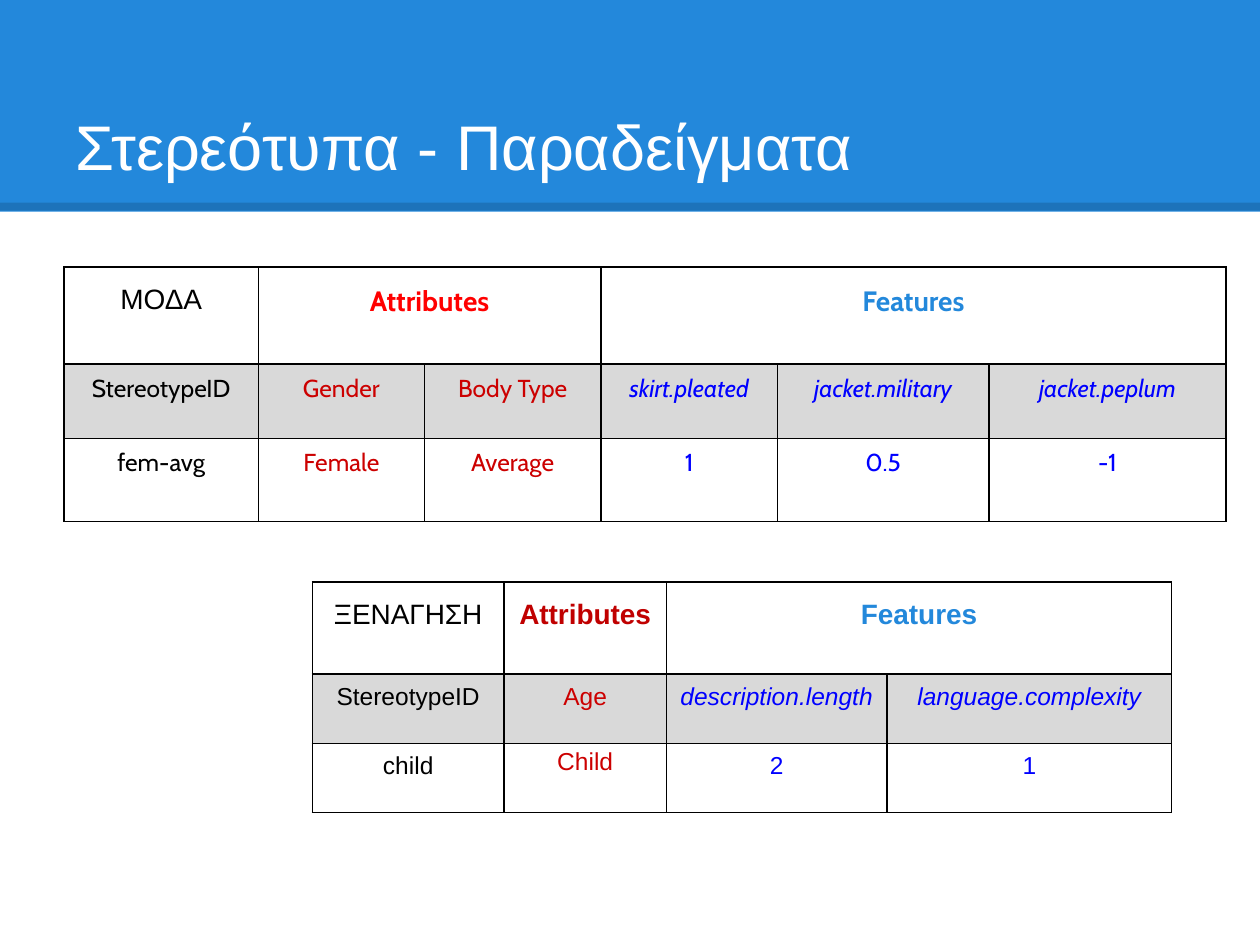
"""Build a slide with two tables of stereotype examples."""
from dataclasses import dataclass

from lxml import etree
from pptx import Presentation
from pptx.dml.color import RGBColor
from pptx.enum.shapes import MSO_CONNECTOR, MSO_SHAPE
from pptx.enum.text import MSO_ANCHOR, PP_ALIGN
from pptx.oxml.ns import qn
from pptx.util import Inches, Pt

RECTANGLE = MSO_SHAPE.RECTANGLE
STRAIGHT = MSO_CONNECTOR.STRAIGHT
BOTTOM = MSO_ANCHOR.BOTTOM
CENTER = PP_ALIGN.CENTER
GRID_COLUMNS, GRID_ROWS = 100, 75


@dataclass(frozen=True)
class Theme:
    plain_font: str = "Arial"
    accent_font: str = "Cabin"
    title_size: int = 36
    heading_size: int = 16
    body_size: int = 14
    white: str = "FFFFFF"
    black: str = "000000"
    blue: str = "2388DB"
    gray: str = "D9D9D9"
    bright_red: str = "FF0000"
    dark_red: str = "C00000"
    attribute: str = "CC0000"
    feature: str = "0000FF"
    line_spacing: float = 1.15


class SlideBuilder:
    def __init__(self, presentation, theme):
        self.theme = theme
        self.slide = presentation.slides.add_slide(presentation.slide_layouts[6])
        self.column = presentation.slide_width / GRID_COLUMNS
        self.row = presentation.slide_height / GRID_ROWS

    def box(self, left, top, width, height):
        return (round(left * self.column), round(top * self.row),
                round(width * self.column), round(height * self.row))

    def style(self, paragraph, text, size, color, font, bold=False, italic=False):
        paragraph.text = text
        paragraph.font.size = Pt(size)
        paragraph.font.name = font
        paragraph.font.bold = bold
        paragraph.font.italic = italic
        paragraph.font.color.rgb = RGBColor.from_string(color)

    def band(self, left, top, width, height, color):
        shape = self.slide.shapes.add_shape(RECTANGLE, *self.box(left, top, width, height))
        shape.shadow.inherit = False
        shape.fill.solid()
        shape.fill.fore_color.rgb = RGBColor.from_string(color)
        shape.line.fill.background()

    def rule(self, top, color, weight, opacity):
        left, y, width, _ = self.box(0, top, GRID_COLUMNS, 0)
        connector = self.slide.shapes.add_connector(STRAIGHT, left, y, left + width, y)
        connector.line.width = Pt(weight)
        connector.line.color.rgb = RGBColor.from_string(color)
        properties = connector._element.spPr
        etree.SubElement(properties, qn("a:effectLst"))
        fill = properties.find(".//" + qn("a:srgbClr"))
        etree.SubElement(fill, qn("a:alpha"), val=str(opacity * 1000))

    def title(self, left, top, width, height, text):
        frame = self.slide.shapes.add_textbox(*self.box(left, top, width, height)).text_frame
        frame.word_wrap = True
        frame.vertical_anchor = BOTTOM
        frame.margin_left = frame.margin_right = Inches(0.1)
        frame.margin_top = frame.margin_bottom = Inches(0.1)
        self.style(frame.paragraphs[0], text, self.theme.title_size,
                   self.theme.white, self.theme.plain_font)

    def border(self, cell):
        properties = cell._tc.get_or_add_tcPr()
        for side in ("lnL", "lnR", "lnT", "lnB"):
            line = etree.SubElement(properties, qn(f"a:{side}"), w=str(Pt(1)))
            fill = etree.SubElement(line, qn("a:solidFill"))
            etree.SubElement(fill, qn("a:srgbClr"), val=self.theme.black)

    def cell(self, cell, text, is_heading, **font):
        side, end = (0.07, 0.1) if is_heading else (0.04, 0.04)
        cell.margin_left = cell.margin_right = Inches(side)
        cell.margin_top = cell.margin_bottom = Inches(end)
        paragraph = cell.text_frame.paragraphs[0]
        paragraph.alignment = CENTER
        paragraph.line_spacing = self.theme.line_spacing
        size = self.theme.heading_size if is_heading else self.theme.body_size
        self.style(paragraph, text, size, **font)

    def stereotype_table(self, left, top, widths, heights, domain, names, values,
                         attribute_count, attribute_color, font):
        """Draw a domain table whose attribute columns come before its feature columns."""
        theme = self.theme
        box = self.box(left, top, sum(widths), sum(heights))
        table = self.slide.shapes.add_table(len(heights), len(widths), *box).table
        table.first_row = table.horz_banding = False
        for column, width in zip(table.columns, widths):
            column.width = round(width * self.column)
        for row, height in zip(table.rows, heights):
            row.height = round(height * self.row)
        for index in range(len(heights)):
            for cell in table.rows[index].cells:
                self.border(cell)
                if index == 1:
                    cell.fill.solid()
                    cell.fill.fore_color.rgb = RGBColor.from_string(theme.gray)
                else:
                    cell.fill.background()

        last, first_feature = len(widths) - 1, attribute_count + 1
        for start, end in ((1, attribute_count), (first_feature, last)):
            if end > start:
                table.cell(0, start).merge(table.cell(0, end))
        self.cell(table.cell(0, 0), domain, True, color=theme.black, font=theme.plain_font)
        self.cell(table.cell(0, 1), "Attributes", True, color=attribute_color,
                  font=font, bold=True)
        self.cell(table.cell(0, first_feature), "Features", True, color=theme.blue,
                  font=font, bold=True)

        feature_count = len(widths) - first_feature
        colors = ([theme.black] + [theme.attribute] * attribute_count
                  + [theme.feature] * feature_count)
        for row, texts in enumerate((names, values), start=1):
            for column, (text, color) in enumerate(zip(texts, colors)):
                italic = row == 1 and column >= first_feature
                self.cell(table.cell(row, column), text, False, color=color,
                          font=font, italic=italic)
        return table


def main():
    presentation = Presentation()
    presentation.slide_width, presentation.slide_height = Inches(10), Inches(7.5)
    theme = Theme()
    builder = SlideBuilder(presentation, theme)
    builder.band(0, 0, GRID_COLUMNS, 16.8, theme.blue)
    builder.rule(16.4, theme.black, 4.5, 15)
    builder.title(5, 3, 90, 12.5, "Στερεότυπα - Παραδείγματα")
    builder.stereotype_table(
        5.1, 21.2, (15.4, 13.2, 14, 14, 16.8, 18.8), (7.7, 5.9, 6.6), "ΜΟΔΑ",
        ("StereotypeID", "Gender", "Body Type",
         "skirt.pleated", "jacket.military", "jacket.peplum"),
        ("fem-avg", "Female", "Average", "1", "0.5", "-1"),
        2, theme.bright_red, theme.accent_font)
    guide_table = builder.stereotype_table(
        24.8, 46.2, (15.2, 12.9, 17.5, 22.6), (7.3, 5.5, 5.5), "ΞΕΝΑΓΗΣΗ",
        ("StereotypeID", "Age", "description.length", "language.complexity"),
        ("child", "Child", "2", "1"),
        1, theme.dark_red, theme.plain_font)
    guide_table.cell(2, 1).text_frame.paragraphs[0].line_spacing = 1.0
    presentation.save("out.pptx")


if __name__ == "__main__":
    main()
